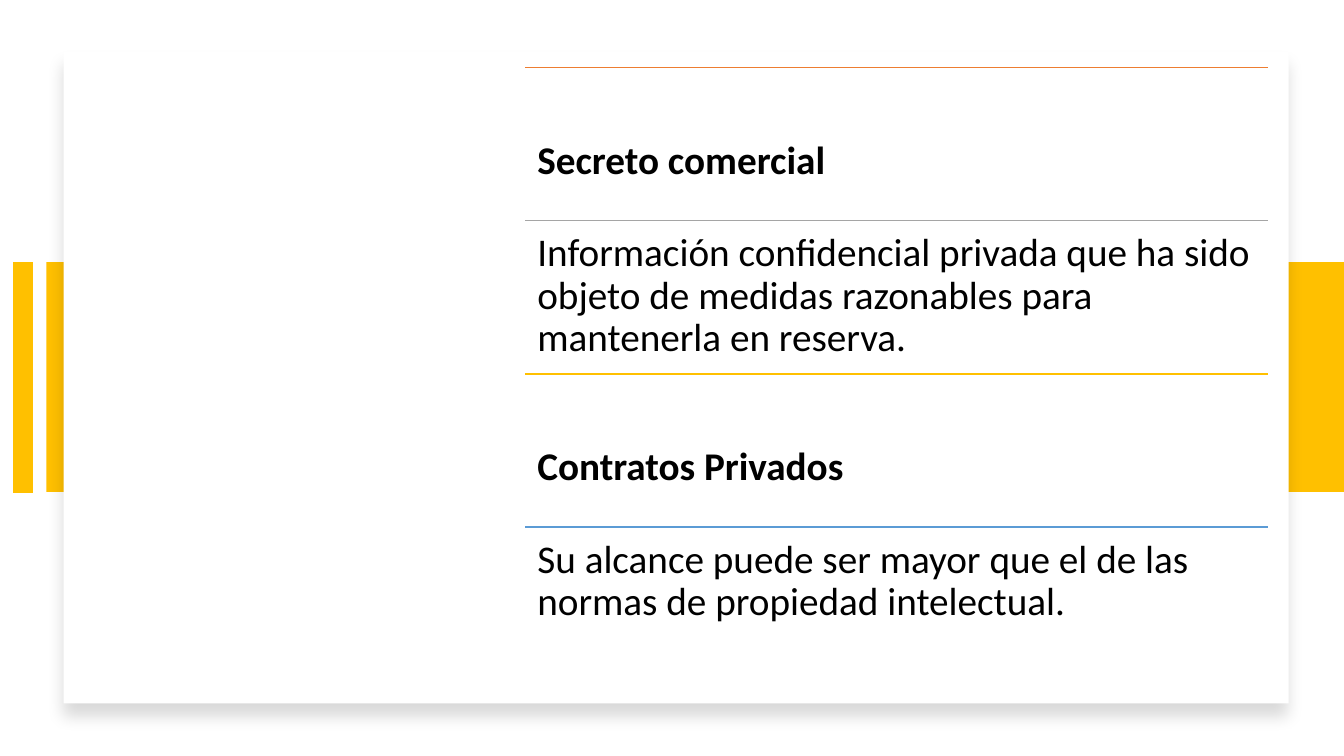
from lxml import etree
from pptx import Presentation
from pptx import util as u
from pptx.dml.color import RGBColor
from pptx.enum import shapes, text
from pptx.oxml import ns

COLORS = {"amber": "FFC000", "white": "FFFFFF", "black": "000000",
          "orange": "ED7D31", "gray": "A5A5A5", "blue": "5B9BD5"}


class SlideBuilder:
    font = {"name": "Calibri", "size": u.Pt(28)}
    inset = 0.12

    def __init__(self, slide):
        self.slide = slide

    def color(self, name):
        return RGBColor.from_string(COLORS[name])

    def panel(self, left, top, width, height, fill):
        panel = self.slide.shapes.add_shape(
            shapes.MSO_SHAPE.RECTANGLE,
            *map(u.Inches, (left, top, width, height)))
        panel.shadow.inherit = False
        panel.fill.solid()
        panel.fill.fore_color.rgb = self.color(fill)
        panel.line.fill.background()
        return panel

    def drop_shadow(self, panel, color, alpha, blur, distance, angle):
        effects = panel._element.spPr.find(ns.qn("a:effectLst"))
        shadow = etree.SubElement(
            effects, ns.qn("a:outerShdw"), blurRad=str(u.Pt(blur)),
            dist=str(u.Pt(distance)), dir=str(angle * 60000),
            algn="t", rotWithShape="0")
        tint = etree.SubElement(shadow, ns.qn("a:srgbClr"), val=COLORS[color])
        etree.SubElement(tint, ns.qn("a:alpha"), val=str(alpha * 1000))

    def rule(self, x1, y1, x2, y2, color, weight):
        rule = self.slide.shapes.add_connector(
            shapes.MSO_CONNECTOR.STRAIGHT, *map(u.Inches, (x1, y1, x2, y2)))
        rule.line.color.rgb = self.color(color)
        rule.line.width = u.Pt(weight)
        etree.SubElement(rule._element.spPr, ns.qn("a:effectLst"))

    def passage(self, left, top, width, height, words, bold, drop):
        box = self.slide.shapes.add_textbox(
            *map(u.Inches, (left, top, width, height)))
        side = u.Inches(self.inset)
        frame_format = {"word_wrap": True, "auto_size": text.MSO_AUTO_SIZE.NONE,
                        "vertical_anchor": text.MSO_ANCHOR.TOP,
                        "margin_left": side, "margin_right": side,
                        "margin_top": u.Inches(self.inset + drop),
                        "margin_bottom": side}
        for key, value in frame_format.items():
            setattr(box.text_frame, key, value)
        paragraph = box.text_frame.paragraphs[0]
        paragraph.line_spacing = 0.9
        run = paragraph.add_run()
        run.text = words
        for key, value in {**self.font, "bold": bold}.items():
            setattr(run.font, key, value)
        run.font.color.rgb = self.color("black")


def main():
    deck = Presentation()
    deck.slide_width, deck.slide_height = u.Inches(13.33), u.Inches(7.5)
    page = SlideBuilder(deck.slides.add_slide(deck.slide_layouts[6]))

    # Amber band and its side stripe
    page.panel(0.46, 2.6, 12.87, 2.28, "amber")
    page.rule(0.23, 2.6, 0.23, 4.89, "amber", 14)

    # White card over the band
    card = page.panel(0.63, 0.51, 12.15, 6.47, "white")
    page.drop_shadow(card, "black", alpha=15, blur=11, distance=10, angle=90)

    # Terms and definitions, each under a coloured rule
    entries = [
        ("orange", "Secreto comercial", True),
        ("gray", "Información confidencial privada que ha sido objeto de "
                 "medidas razonables para mantenerla en reserva.", False),
        ("amber", "Contratos Privados", True),
        ("blue", "Su alcance puede ser mayor que el de las normas de "
                 "propiedad intelectual.", False),
    ]
    left, first_top, width, row_height = 5.21, 0.67, 7.37, 1.52
    term_drop = 0.6
    for row, (color, words, is_term) in enumerate(entries):
        top = first_top + row * row_height
        page.rule(left, top, left + width, top, color, 1)
        page.passage(left, top, width, row_height, words, is_term,
                     term_drop if is_term else 0)

    deck.save("out.pptx")


if __name__ == "__main__":
    main()
